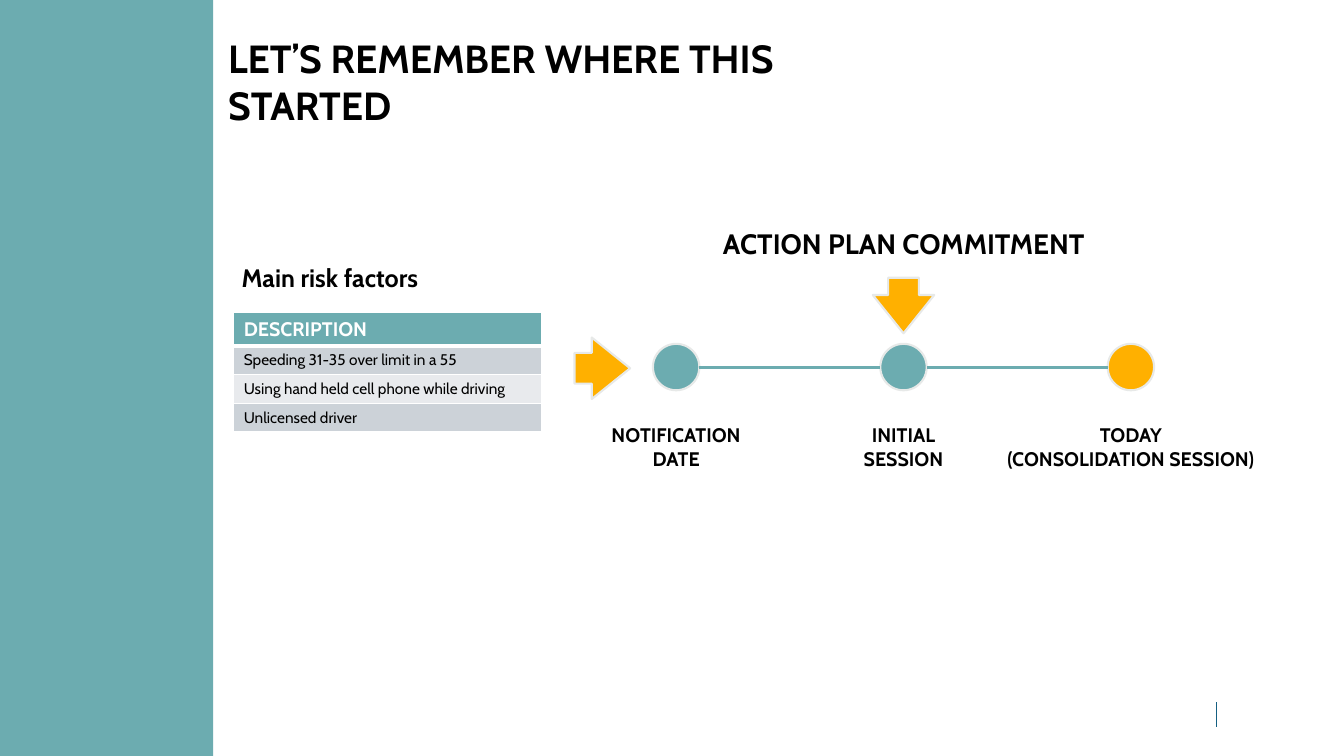
"""Build the risk factor and action plan timeline slide."""
import pptx
import pptx.util
import pptx.dml.color
import pptx.enum.shapes
import pptx.enum.text
import pptx.oxml
import pptx.oxml.ns
from dataclasses import dataclass

Cm = pptx.util.Cm
Pt = pptx.util.Pt
SHAPES = pptx.enum.shapes.MSO_SHAPE
ALIGN = pptx.enum.text.PP_ALIGN

TITLE = "LET’S REMEMBER WHERE THIS STARTED"
RISK_HEADING = "Main risk factors"
PLAN_HEADING = "ACTION PLAN COMMITMENT"
RISK_ROWS = [
    "DESCRIPTION",
    "Speeding 31-35 over limit in a 55",
    "Using hand held cell phone while driving",
    "Unlicensed driver",
]
MILESTONES = [
    {"lines": ["NOTIFICATION", "DATE"], "color": "6CACB0", "width": 3.91},
    {"lines": ["INITIAL", "SESSION"], "color": "6CACB0", "width": 2.57},
    {"lines": ["TODAY", "(CONSOLIDATION SESSION)"], "color": "FFB000", "width": 6.86},
]


@dataclass(frozen=True)
class Theme:
    """Colours, font and type sizes."""
    font: str = "Cabin"
    teal: str = "6CACB0"
    amber: str = "FFB000"
    outline: str = "E7E9E8"
    ink: str = "000000"
    white: str = "FFFFFF"
    mark: str = "156082"
    bands: tuple = ("CCD2D8", "E8EAED")
    title: int = 28
    plan: int = 20
    heading: int = 18
    label: int = 14
    body: int = 11


THEME = Theme()
FIRST_X, STEP_X, AXIS_Y = 17.04, 5.73, 9.25
DIAMETER = 1.17
ARROW_WIDTH, ARROW_HEIGHT = 1.55, 1.4


def rgb(value):
    return pptx.dml.color.RGBColor.from_string(value)


def write(frame, lines, size, color=THEME.ink, bold=True, align=ALIGN.LEFT):
    for number, line in enumerate(lines):
        para = frame.paragraphs[0] if number == 0 else frame.add_paragraph()
        para.alignment = align
        span = para.add_run()
        span.text = line
        span.font.name = THEME.font
        span.font.size = Pt(size)
        span.font.bold = bold
        span.font.color.rgb = rgb(color)


def add_text(page, place, lines, size, align=ALIGN.CENTER, wrap=False):
    box = page.shapes.add_textbox(*map(Cm, place))
    box.text_frame.word_wrap = wrap
    write(box.text_frame, lines, size, align=align)


def add_filled(page, kind, place, fill, outlined=True):
    shape = page.shapes.add_shape(kind, *map(Cm, place))
    shape.shadow.inherit = False
    shape.fill.solid()
    shape.fill.fore_color.rgb = rgb(fill)
    if outlined:
        shape.line.color.rgb = rgb(THEME.outline)
        shape.line.width = Pt(1.5)
    else:
        shape.line.fill.background()
    return shape


def add_line(page, ends, color, width):
    line = page.shapes.add_connector(
        pptx.enum.shapes.MSO_CONNECTOR.STRAIGHT, *map(Cm, ends))
    line.line.color.rgb = rgb(color)
    line.line.width = Pt(width)
    effects = pptx.oxml.parse_xml("<a:effectLst %s/>" % pptx.oxml.ns.nsdecls("a"))
    line._element.spPr.append(effects)


def add_arrow(page, center_x, center_y, rotation):
    place = (center_x - ARROW_WIDTH / 2, center_y - ARROW_HEIGHT / 2,
             ARROW_WIDTH, ARROW_HEIGHT)
    arrow = add_filled(page, SHAPES.DOWN_ARROW, place, THEME.amber)
    arrow.adjustments[0] = 0.5
    arrow.adjustments[1] = 0.69
    arrow.rotation = rotation


def set_borders(cell, bottom):
    properties = cell._tc.get_or_add_tcPr()
    widths = {"lnL": 1, "lnR": 1, "lnT": 1, "lnB": bottom}
    for position, (side, width) in enumerate(widths.items()):
        properties.insert(position, pptx.oxml.parse_xml(
            '<a:%s %s w="%d"><a:solidFill><a:srgbClr val="%s"/></a:solidFill></a:%s>'
            % (side, pptx.oxml.ns.nsdecls("a"), Pt(width), THEME.white, side)))


def add_risk_table(page):
    place = (5.89, 7.87, 7.77, 3)
    table = page.shapes.add_table(len(RISK_ROWS), 1, *map(Cm, place)).table
    for number, text in enumerate(RISK_ROWS):
        header = number == 0
        table.rows[number].height = Cm(0.84 if header else 0.72)
        cell = table.cell(number, 0)
        cell.fill.solid()
        cell.fill.fore_color.rgb = rgb(THEME.teal if header else THEME.bands[(number - 1) % 2])
        set_borders(cell, 3 if header else 1)
        write(cell.text_frame, [text], THEME.label if header else THEME.body,
              THEME.white if header else THEME.ink, header)


def add_timeline(page):
    radius = DIAMETER / 2
    for number, milestone in enumerate(MILESTONES):
        center = FIRST_X + number * STEP_X
        add_filled(page, SHAPES.OVAL,
                   (center - radius, AXIS_Y - radius, DIAMETER, DIAMETER),
                   milestone["color"])
        width = milestone["width"]
        add_text(page, (center - width / 2, 10.54, width, 1.45),
                 milestone["lines"], THEME.label)
        if number:
            add_line(page, (center - STEP_X + radius, AXIS_Y, center - radius, AXIS_Y),
                     THEME.teal, 2.25)
    add_arrow(page, FIRST_X + STEP_X, 7.7, 0)
    add_arrow(page, 15.18, 9.28, 270)


def main():
    deck = pptx.Presentation()
    deck.slide_width = Cm(33.87)
    deck.slide_height = Cm(19.05)
    page = deck.slides.add_slide(deck.slide_layouts[6])
    add_line(page, (30.66, 17.7, 30.66, 18.31), THEME.mark, 0.25)
    add_filled(page, SHAPES.RECTANGLE, (0, 0, 5.37, 19.05), THEME.teal, outlined=False)
    add_text(page, (5.5, 0.74, 17.98, 1.45), [TITLE], THEME.title, ALIGN.LEFT, wrap=True)
    add_text(page, (5.65, 6.48, 5.33, 1.02), [RISK_HEADING], THEME.heading)
    add_text(page, (17.91, 5.59, 9.73, 1.12), [PLAN_HEADING], THEME.plan)
    add_risk_table(page)
    add_timeline(page)
    deck.save("out.pptx")


if __name__ == "__main__":
    main()
